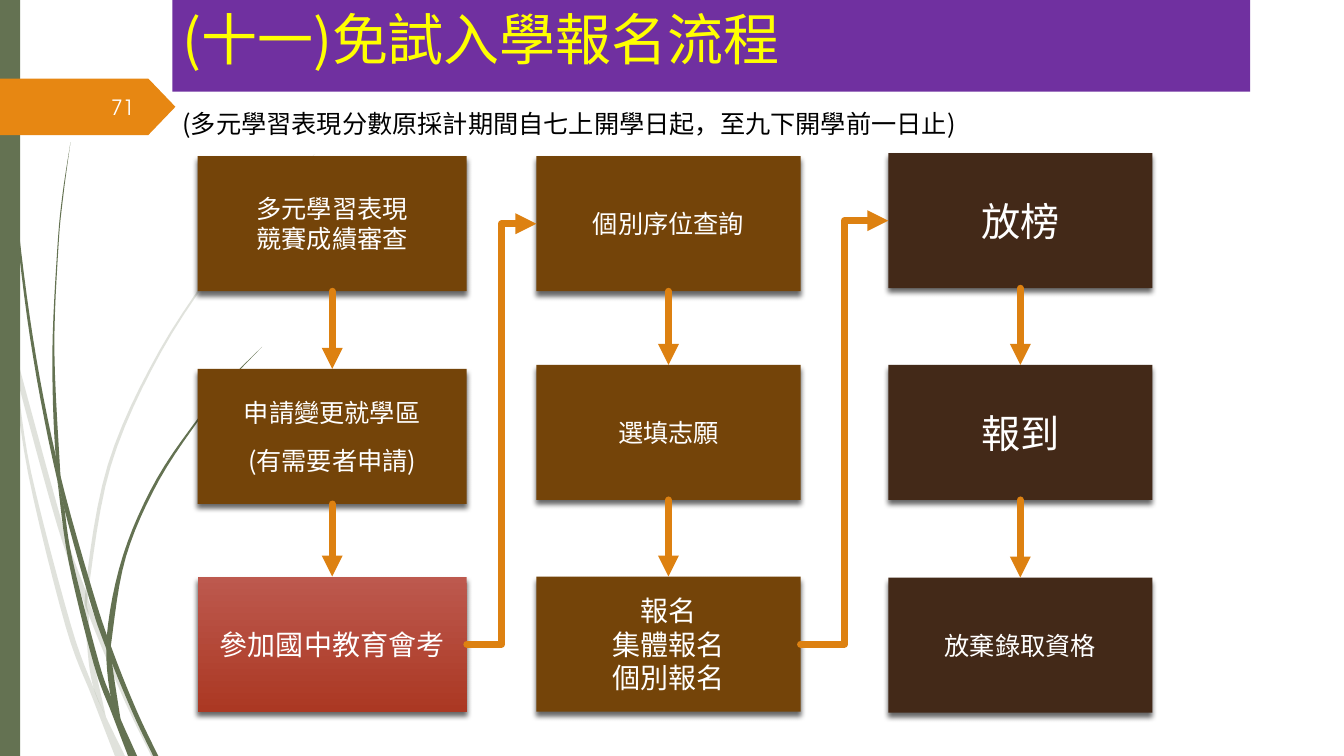
from lxml.etree import SubElement
from pptx import Presentation
from pptx.dml.color import RGBColor
from pptx.enum.shapes import MSO_CONNECTOR as Connector, MSO_SHAPE as Preset
from pptx.enum.text import MSO_ANCHOR as Anchor, PP_ALIGN as Align
from pptx.oxml.ns import qn
from pptx.util import Inches, Pt

COLORS = {
    "sage": "647252", "orange": "E78712", "arrow": "DD8111",
    "purple": "7030A0", "yellow": "FFFF00", "brown": "744409",
    "dark": "432918", "red_top": "BD594E", "red_bottom": "AB3823",
    "white": "FFFFFF", "black": "000000",
}
CHINESE, LATIN = "Noto Sans CJK SC", "TeX Gyre Adventor"
TOP, LEFT, BOTTOM, RIGHT = range(4)
BOX_HEIGHT = 1.34

COLUMNS = [
    (1.96, 2.67, (1.55, 3.66, 5.72), "brown", [
        (["多元學習表現", "競賽成績審查"], 18, 0),
        (["申請變更就學區", "(有需要者申請)"], 18, 13),
        (["參加國中教育會考"], 20, 0)]),
    (5.32, 2.62, (1.55, 3.62, 5.72), "brown", [
        (["個別序位查詢"], 18, 0),
        (["選填志願"], 18, 0),
        (["報名", "集體報名", "個別報名"], 20, 0)]),
    (8.81, 2.62, (1.52, 3.62, 5.73), "dark", [
        (["放榜"], 28, 0),
        (["報到"], 28, 0),
        (["放棄錄取資格"], 18, 0)]),
]

PALE_STRANDS = [
    ([(0, 2.82), (.08, 3.22), (.14, 3.45), (.62, 5.2), (.85, 5.86), (.92, 6.07),
      (1.27, 6.92), (1.55, 7.5)],
     [(1.5, 7.5), (1.23, 6.94), (.88, 6.1), (.57, 5.22), (.17, 3.76), (.1, 3.44),
      (0, 2.99)]),
    ([(.11, 3.5), (.28, 4.7), (.65, 6.21), (.92, 6.93), (1.14, 7.5)],
     [(1.24, 7.5), (1.05, 7.11), (.93, 6.83), (.7, 6.19), (.31, 4.69), (.17, 3.76)]),
    ([(3.12, 1.53), (2.68, 1.97), (2.28, 2.44), (1.58, 3.48), (1.07, 4.61),
      (.85, 5.84), (.87, 6.46), (.93, 6.83), (1.05, 7.11)],
     [(1.04, 7.06), (.91, 6.46), (.88, 6.1), (.88, 5.84), (1.1, 4.62), (1.6, 3.49),
      (2.29, 2.45), (2.68, 1.98)]),
]
STRONG_STRANDS = [
    ([(.03, 0), (.07, 1.1), (.17, 2.33), (.33, 3.55), (.57, 4.77), (.88, 5.92),
      (1.06, 6.45), (1.32, 7.08), (1.52, 7.5)],
     [(1.57, 7.5), (1.36, 7.06), (1.13, 6.49), (.93, 5.9), (.6, 4.72), (.36, 3.55),
      (.19, 2.32), (.08, 1.09), (.03, 0)]),
    ([(.57, 4.77), (.68, 5.57), (.93, 6.59), (1.11, 7.08), (1.27, 7.5)],
     [(1.36, 7.5), (1.22, 7.19), (1.1, 6.91), (.98, 6.57), (.72, 5.56), (.64, 5.05)]),
    ([(.7, 1.41), (.62, 1.93), (.57, 2.45), (.52, 3.49), (.55, 4.49), (.64, 5.05)],
     [(.6, 4.72), (.54, 3.49), (.58, 2.45), (.63, 1.93), (.7, 1.41)]),
    ([(2.6, 3.44), (2.31, 3.73), (2.04, 4.05), (1.56, 4.74), (1.22, 5.51),
      (1.06, 6.31), (1.1, 6.92), (1.22, 7.19)],
     [(1.2, 7.16), (1.11, 6.56), (1.11, 6.33), (1.25, 5.52), (1.58, 4.76),
      (2.05, 4.06), (2.31, 3.74)]),
]


def color(name):
    return RGBColor.from_string(COLORS[name])


def paint(shape, fill):
    shape.fill.solid()
    shape.fill.fore_color.rgb = color(fill)
    shape.line.fill.background()
    shape.shadow.inherit = False


def smooth(points, steps=6):
    padded = [points[0], *points, points[-1]]
    curve = []
    for a, b, c, d in zip(padded, padded[1:], padded[2:], padded[3:]):
        for step in range(steps):
            t = step / steps
            curve.append(tuple(
                q + t * (r - p) / 2 + t * t * (2 * p - 5 * q + 4 * r - s) / 2
                + t ** 3 * (3 * q - p - 3 * r + s) / 2
                for p, q, r, s in zip(a, b, c, d)))
    return curve + [points[-1]]


def add_strand(slide, edges, opacity):
    outline = [(Inches(x), Inches(y)) for edge in edges for x, y in smooth(edge)]
    builder = slide.shapes.build_freeform(*outline[0], scale=1.0)
    builder.add_line_segments(outline[1:], close=True)
    strand = builder.convert_to_shape()
    paint(strand, "sage")
    if opacity < 100:
        tint = strand._element.spPr.find(qn("a:solidFill"))[0]
        SubElement(tint, qn("a:alpha"), val=str(opacity * 1000))


def write(shape, lines, size, ink, align=Align.LEFT, anchor=Anchor.TOP,
          font=CHINESE, gap=0):
    frame = shape.text_frame
    frame.word_wrap = True
    frame.vertical_anchor = anchor
    for index, line in enumerate(lines):
        paragraph = frame.add_paragraph() if index else frame.paragraphs[0]
        paragraph.text = line
        paragraph.alignment = align
        if index and gap:
            paragraph.space_before = Pt(gap)
        paragraph.font.name = font
        paragraph.font.size = Pt(size)
        paragraph.font.color.rgb = color(ink)
        defaults = paragraph._p.pPr.find(qn("a:defRPr"))
        SubElement(defaults, qn("a:ea"), typeface=font)


def add_block(slide, preset, left, top, width, height, fill):
    block = slide.shapes.add_shape(
        preset, Inches(left), Inches(top), Inches(width), Inches(height))
    paint(block, fill)
    return block


def add_label(slide, left, top, width, height, *text, **style):
    label = slide.shapes.add_textbox(
        Inches(left), Inches(top), Inches(width), Inches(height))
    write(label, *text, **style)


def add_box_shadow(box):
    effects = box._element.spPr.find(qn("a:effectLst"))
    shadow = SubElement(effects, qn("a:outerShdw"), blurRad=str(Pt(4)),
                        dist=str(Pt(3)), dir="5400000", rotWithShape="0")
    tint = SubElement(shadow, qn("a:srgbClr"), val=COLORS["black"])
    SubElement(tint, qn("a:alpha"), val="60000")


def add_step(slide, left, top, width, fill, lines, size, gap):
    step = add_block(slide, Preset.RECTANGLE, left, top, width, BOX_HEIGHT, fill)
    add_box_shadow(step)
    write(step, lines, size, "white", Align.CENTER, Anchor.MIDDLE, gap=gap)
    return step


def highlight(step):
    step.fill.gradient()
    step.fill.gradient_angle = 270
    for stop, name in zip(step.fill.gradient_stops, ("red_top", "red_bottom")):
        stop.color.rgb = color(name)


def add_arrow(slide, kind, source, source_side, target, target_side):
    arrow = slide.shapes.add_connector(kind, 0, 0, 0, 0)
    arrow.begin_connect(source, source_side)
    arrow.end_connect(target, target_side)
    arrow.line.color.rgb = color("arrow")
    arrow.line.width = Pt(5)
    line = arrow.line._get_or_add_ln()
    line.set("cap", "rnd")
    SubElement(line, qn("a:round"))
    SubElement(line, qn("a:tailEnd"), type="triangle")
    SubElement(arrow._element.spPr, qn("a:effectLst"))


def add_flow(slide):
    flow = [[add_step(slide, left, top, width, fill, *step)
             for top, step in zip(tops, steps)]
            for left, width, tops, fill, steps in COLUMNS]
    highlight(flow[0][-1])
    for column in flow:
        for upper, lower in zip(column, column[1:]):
            add_arrow(slide, Connector.STRAIGHT, upper, BOTTOM, lower, TOP)
    for column, following in zip(flow, flow[1:]):
        add_arrow(slide, Connector.ELBOW, column[-1], RIGHT, following[0], LEFT)


def main():
    presentation = Presentation()
    presentation.slide_width, presentation.slide_height = Inches(13.33), Inches(7.5)
    slide = presentation.slides.add_slide(presentation.slide_layouts[6])
    for strands, opacity in ((PALE_STRANDS, 20), (STRONG_STRANDS, 100)):
        for edges in strands:
            add_strand(slide, edges, opacity)
    add_block(slide, Preset.RECTANGLE, 0, 0, 0.2, 7.5, "sage")
    page_tag = add_block(slide, Preset.PENTAGON, 0, 0.78, 1.74, 0.56, "orange")
    page_tag.adjustments[0] = 0.48
    title = add_block(slide, Preset.RECTANGLE, 1.71, 0, 10.69, 0.91, "purple")
    write(title, ["(十一)免試入學報名流程"], 40, "yellow")
    add_flow(slide)
    add_label(slide, 1.71, 1.03, 11.07, 0.4,
              ["(多元學習表現分數原採計期間自七上開學日起，至九下開學前一日止)"],
              18, "black")
    add_label(slide, 0.58, 0.86, 0.85, 0.4, ["71"], 15, "white",
              align=Align.RIGHT, anchor=Anchor.MIDDLE, font=LATIN)
    presentation.save("out.pptx")


if __name__ == "__main__":
    main()
